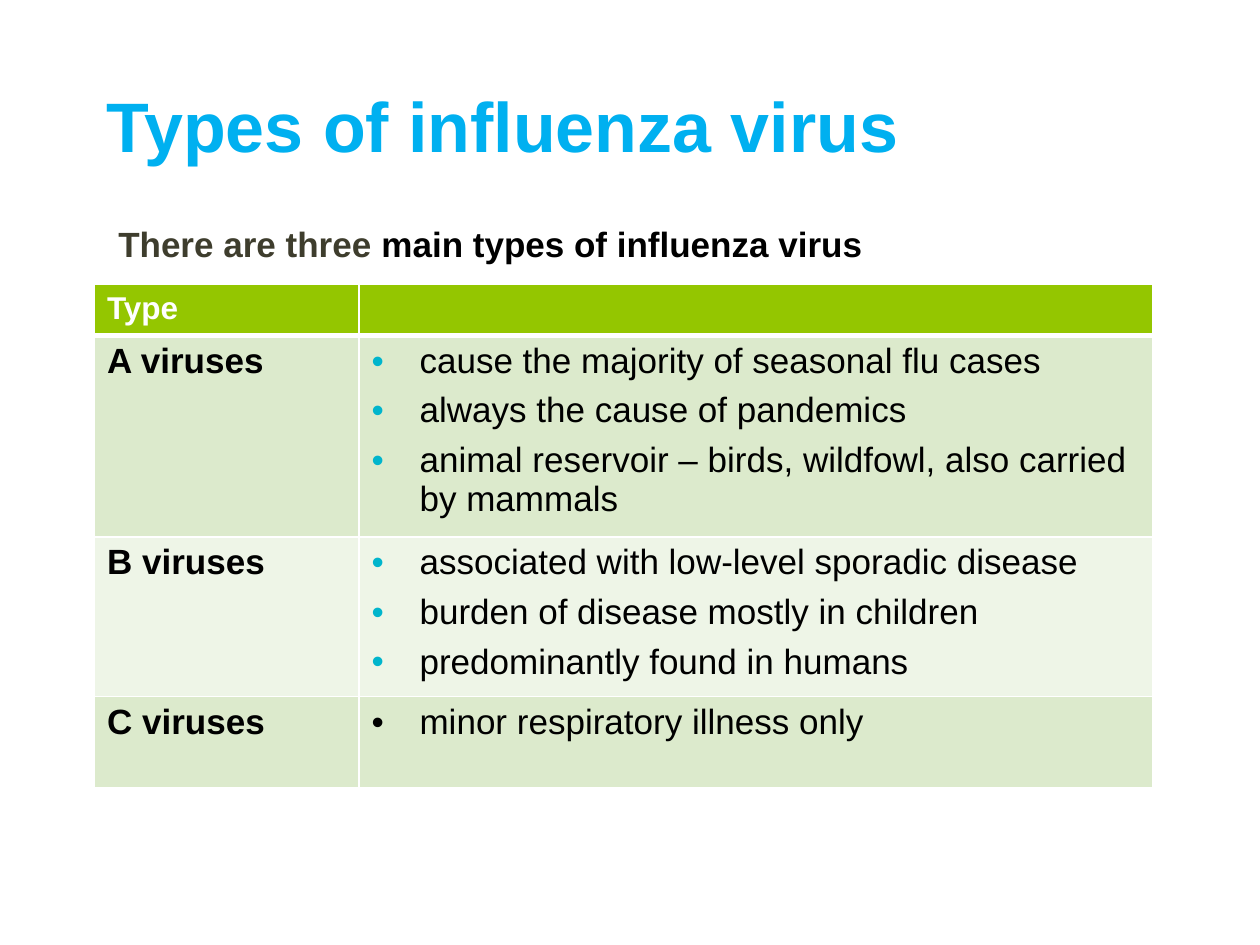
import pptx
import pptx.dml.color
import pptx.enum.text
import pptx.oxml
import pptx.oxml.ns
import pptx.util

WIDTH, HEIGHT = 10, 7.5
COLORS = {
    "title": "00B0F0",
    "intro": "3E3D2D",
    "text": "000000",
    "white": "FFFFFF",
    "header": "94C600",
    "odd": "DCEACC",
    "even": "EEF5E7",
    "bullet": "00B5CC",
}
COLUMN_WIDTHS = [2.1, 6.3]
ROW_HEIGHTS = [0.38, 1.5, 1.19, 0.72]
VIRUSES = [
    ("A viruses", "bullet", 6, [
        "cause the majority of seasonal flu cases",
        "always the cause of pandemics",
        "animal reservoir – birds, wildfowl, also carried by mammals",
    ]),
    ("B viruses", "bullet", 6, [
        "associated with low-level sporadic disease",
        "burden of disease mostly in children",
        "predominantly found in humans",
    ]),
    ("C viruses", "text", 0, ["minor respiratory illness only"]),
]


def rgb(name):
    return pptx.dml.color.RGBColor.from_string(COLORS[name])


def style_font(font, size, color, bold=True):
    font.name = "Arial"
    font.size = pptx.util.Pt(size)
    font.bold = bold
    font.color.rgb = rgb(color)


def add_text_box(slide, left, top, width, height):
    shape = slide.shapes.add_textbox(*map(pptx.util.Inches, (left, top, width, height)))
    shape.text_frame.word_wrap = True
    return shape.text_frame


def add_title(slide, text):
    frame = add_text_box(slide, 0.75, 0.36, 8.83, 1.26)
    frame.vertical_anchor = pptx.enum.text.MSO_ANCHOR.MIDDLE
    paragraph = frame.paragraphs[0]
    paragraph.text = text
    style_font(paragraph.font, 40, "title")


def add_intro(slide, parts):
    frame = add_text_box(slide, 0.84, 1.72, 6.29, 0.44)
    for text, color in parts:
        run = frame.paragraphs[0].add_run()
        run.text = text
        style_font(run.font, 20, color)


def add_bullet(paragraph, color):
    properties = paragraph._p.get_or_add_pPr()
    indent = pptx.util.Inches(0.38)
    properties.set("marL", str(indent))
    properties.set("indent", str(-indent))
    namespace = pptx.oxml.ns.nsdecls("a")
    for xml in (
        f'<a:buClr {namespace}><a:srgbClr val="{COLORS[color]}"/></a:buClr>',
        f'<a:buFont {namespace} typeface="Arial"/>',
        f'<a:buChar {namespace} char="•"/>',
    ):
        properties.append(pptx.oxml.parse_xml(xml))


def style_cell(cell, fill, top=1, bottom=1):
    properties = cell._tc.get_or_add_tcPr()
    for side, points in (("L", 1), ("R", 1), ("T", top), ("B", bottom)):
        properties.append(pptx.oxml.parse_xml(
            f'<a:ln{side} {pptx.oxml.ns.nsdecls("a")} w="{pptx.util.Pt(points)}">'
            f'<a:solidFill><a:srgbClr val="{COLORS["white"]}"/></a:solidFill></a:ln{side}>'
        ))
    cell.fill.solid()
    cell.fill.fore_color.rgb = rgb(fill)


def write_label(cell, text, size, color):
    paragraph = cell.text_frame.paragraphs[0]
    paragraph.text = text
    style_font(paragraph.font, size, color)


def write_bullets(cell, items, bullet_color, space_after):
    frame = cell.text_frame
    for index, item in enumerate(items):
        paragraph = frame.add_paragraph() if index else frame.paragraphs[0]
        paragraph.text = item
        paragraph.space_after = pptx.util.Pt(space_after)
        add_bullet(paragraph, bullet_color)
        style_font(paragraph.font, 20, "text", bold=False)


def add_virus_table(slide):
    left, top, width, height = map(
        pptx.util.Inches, (0.75, 2.26, sum(COLUMN_WIDTHS), sum(ROW_HEIGHTS)))
    table = slide.shapes.add_table(
        len(ROW_HEIGHTS), len(COLUMN_WIDTHS), left, top, width, height).table
    for column, column_width in zip(table.columns, COLUMN_WIDTHS):
        column.width = pptx.util.Inches(column_width)
    for row, row_height in zip(table.rows, ROW_HEIGHTS):
        row.height = pptx.util.Inches(row_height)
    for cell in table.rows[0].cells:
        style_cell(cell, "header", bottom=3)
    write_label(table.cell(0, 0), "Type", 18, "white")
    for row, (name, bullet_color, space_after, items) in enumerate(VIRUSES, 1):
        for cell in table.rows[row].cells:
            style_cell(cell, "odd" if row % 2 else "even", top=3 if row == 1 else 1)
        write_label(table.cell(row, 0), name, 20, "text")
        write_bullets(table.cell(row, 1), items, bullet_color, space_after)


def main():
    presentation = pptx.Presentation()
    presentation.slide_width = pptx.util.Inches(WIDTH)
    presentation.slide_height = pptx.util.Inches(HEIGHT)
    slide = presentation.slides.add_slide(presentation.slide_layouts[6])
    add_title(slide, "Types of influenza virus")
    add_virus_table(slide)
    add_intro(slide, [("There are three ", "intro"),
                      ("main types of influenza virus", "text")])
    presentation.save("out.pptx")


if __name__ == "__main__":
    main()
